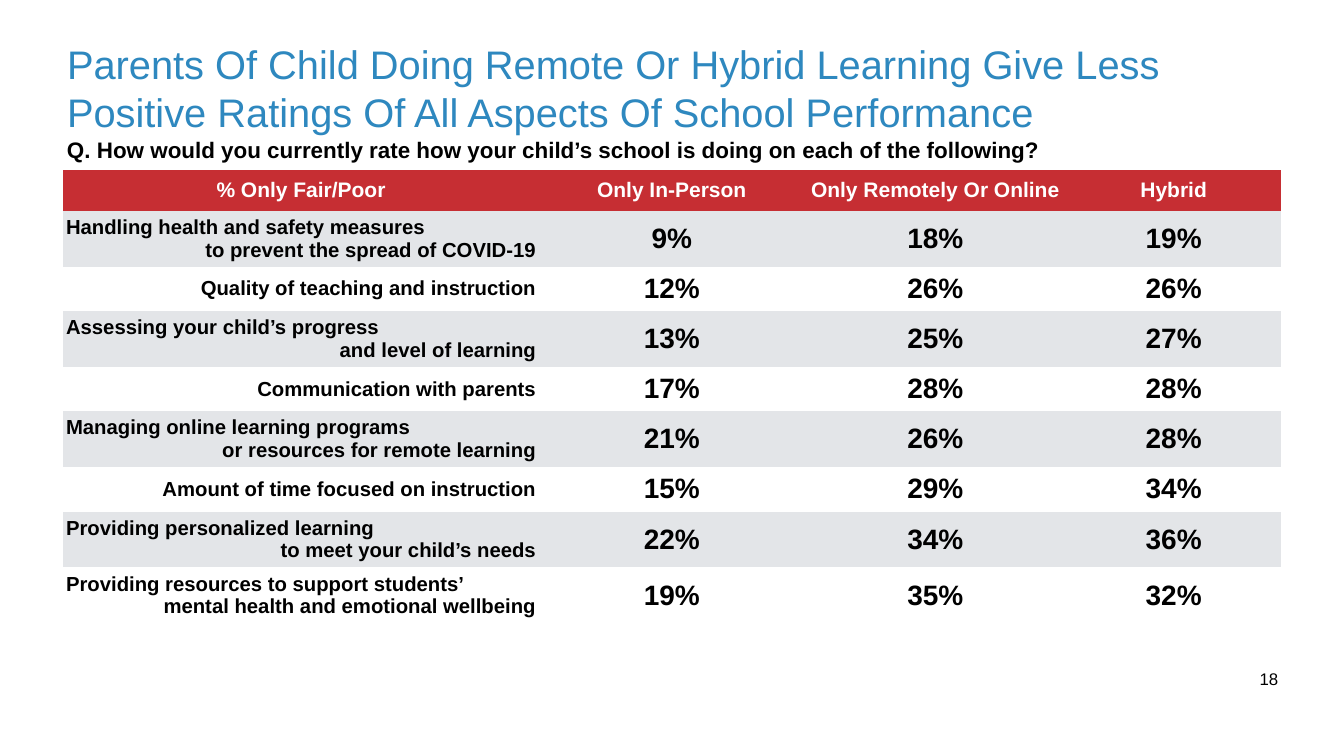
import pptx
import pptx.dml.color
import pptx.enum.text
import pptx.oxml.ns
import pptx.util

WIDTH, HEIGHT = 26.67, 15
MARGIN = 1.25
CONTENT_WIDTH = WIDTH - 2 * MARGIN
FONT = "Arial"
COLORS = {"title": "2E88BF", "header": "C62E33", "band": "E3E5E8",
          "white": "FFFFFF", "text": "000000"}
ALIGN = pptx.enum.text.PP_ALIGN
ANCHOR = pptx.enum.text.MSO_ANCHOR
AUTO_SIZE = pptx.enum.text.MSO_AUTO_SIZE
PLAIN_TABLE = "{2D5ABB26-0587-4C30-8999-92F81FD0307C}"

COLUMN_WIDTHS = (9.45, 5.26, 5.2, 4.26)
HEADER_HEIGHT, SINGLE_HEIGHT, DOUBLE_HEIGHT = 0.81, 0.88, 1.11
HEADERS = ("% Only Fair/Poor", "Only In-Person", "Only Remotely Or Online", "Hybrid")
RATINGS = (
    (("Handling health and safety measures", "to prevent the spread of COVID-19"), (9, 18, 19)),
    (("Quality of teaching and instruction",), (12, 26, 26)),
    (("Assessing your child’s progress", "and level of learning"), (13, 25, 27)),
    (("Communication with parents",), (17, 28, 28)),
    (("Managing online learning programs", "or resources for remote learning"), (21, 26, 28)),
    (("Amount of time focused on instruction",), (15, 29, 34)),
    (("Providing personalized learning", "to meet your child’s needs"), (22, 34, 36)),
    (("Providing resources to support students’", "mental health and emotional wellbeing"),
     (19, 35, 32)),
)


def set_margins(target, inches):
    """Give a text frame or table cell the same margin on every side."""
    for side in ("left", "right", "top", "bottom"):
        setattr(target, f"margin_{side}", pptx.util.Inches(inches))


def write_lines(frame, lines, aligns, color, size, bold=False):
    """Write one paragraph per line, each with its own alignment."""
    font_values = {"name": FONT, "size": pptx.util.Pt(size), "bold": bold}
    for index, (line, align) in enumerate(zip(lines, aligns)):
        para = frame.add_paragraph() if index else frame.paragraphs[0]
        para.alignment = align
        span = para.add_run()
        span.text = line
        for name, value in font_values.items():
            setattr(span.font, name, value)
        span.font.color.rgb = pptx.dml.color.RGBColor.from_string(COLORS[color])


def fill_cell(cell, fill, lines, aligns, color, size):
    """Fill a table cell with a colour and bold, vertically centred text."""
    cell.fill.solid()
    cell.fill.fore_color.rgb = pptx.dml.color.RGBColor.from_string(COLORS[fill])
    cell.vertical_anchor = ANCHOR.MIDDLE
    set_margins(cell, 0.06)
    write_lines(cell.text_frame, lines, aligns, color, size, bold=True)


def add_title(page, text):
    """Place and format the title placeholder."""
    title = page.shapes.title
    place = {"left": MARGIN, "top": 0.7, "width": CONTENT_WIDTH, "height": 2.08}
    for name, value in place.items():
        setattr(title, name, pptx.util.Inches(value))
    frame = title.text_frame
    frame.word_wrap = True
    frame.auto_size = AUTO_SIZE.NONE
    frame.vertical_anchor = ANCHOR.MIDDLE
    set_margins(frame, 0.08)
    write_lines(frame, [text], [ALIGN.LEFT], "title", 56.9)


def add_text(page, place, text, align, size, bold=False, grow=False):
    """Add a one-paragraph text box that wraps, or grows to fit its line."""
    frame = page.shapes.add_textbox(*map(pptx.util.Inches, place)).text_frame
    frame.word_wrap = not grow
    frame.auto_size = AUTO_SIZE.SHAPE_TO_FIT_TEXT if grow else AUTO_SIZE.NONE
    set_margins(frame, 0.08)
    write_lines(frame, [text], [align], "text", size, bold)


def add_ratings_table(page):
    """Add the table of fair or poor ratings by way of learning."""
    row_heights = [HEADER_HEIGHT] + [
        DOUBLE_HEIGHT if len(label) > 1 else SINGLE_HEIGHT for label, _ in RATINGS]
    place = (MARGIN, 3.37, CONTENT_WIDTH, sum(row_heights))
    table = page.shapes.add_table(len(row_heights), len(HEADERS),
                                  *map(pptx.util.Inches, place)).table
    table.horz_banding = False
    table._tbl.tblPr.find(pptx.oxml.ns.qn("a:tableStyleId")).text = PLAIN_TABLE
    for column, width in zip(table.columns, COLUMN_WIDTHS):
        column.width = pptx.util.Inches(width)
    for row, height in zip(table.rows, row_heights):
        row.height = pptx.util.Inches(height)
    for column, header in enumerate(HEADERS):
        fill_cell(table.cell(0, column), "header", [header], [ALIGN.CENTER], "white", 30)
    for row, (label, values) in enumerate(RATINGS, start=1):
        fill = "band" if row % 2 else "white"
        aligns = [ALIGN.LEFT] * (len(label) - 1) + [ALIGN.RIGHT]
        fill_cell(table.cell(row, 0), fill, label, aligns, "text", 29)
        for column, value in enumerate(values, start=1):
            fill_cell(table.cell(row, column), fill, [f"{value}%"], [ALIGN.CENTER], "text", 40)


def main():
    """Build the slide and save the deck."""
    deck = pptx.Presentation()
    deck.slide_width = pptx.util.Inches(WIDTH)
    deck.slide_height = pptx.util.Inches(HEIGHT)
    page = deck.slides.add_slide(deck.slide_layouts.get_by_name("Title Only"))
    add_title(page, "Parents Of Child Doing Remote Or Hybrid Learning Give Less "
                    "Positive Ratings Of All Aspects Of School Performance")
    add_text(page, (24.88, 13.19, 0.6, 0.56), "18", ALIGN.CENTER, 24, grow=True)
    add_ratings_table(page)
    add_text(page, (MARGIN, 2.63, CONTENT_WIDTH, 0.98),
             "Q. How would you currently rate how your child’s school is doing "
             "on each of the following?", ALIGN.LEFT, 32, bold=True)
    deck.save("out.pptx")


if __name__ == "__main__":
    main()
